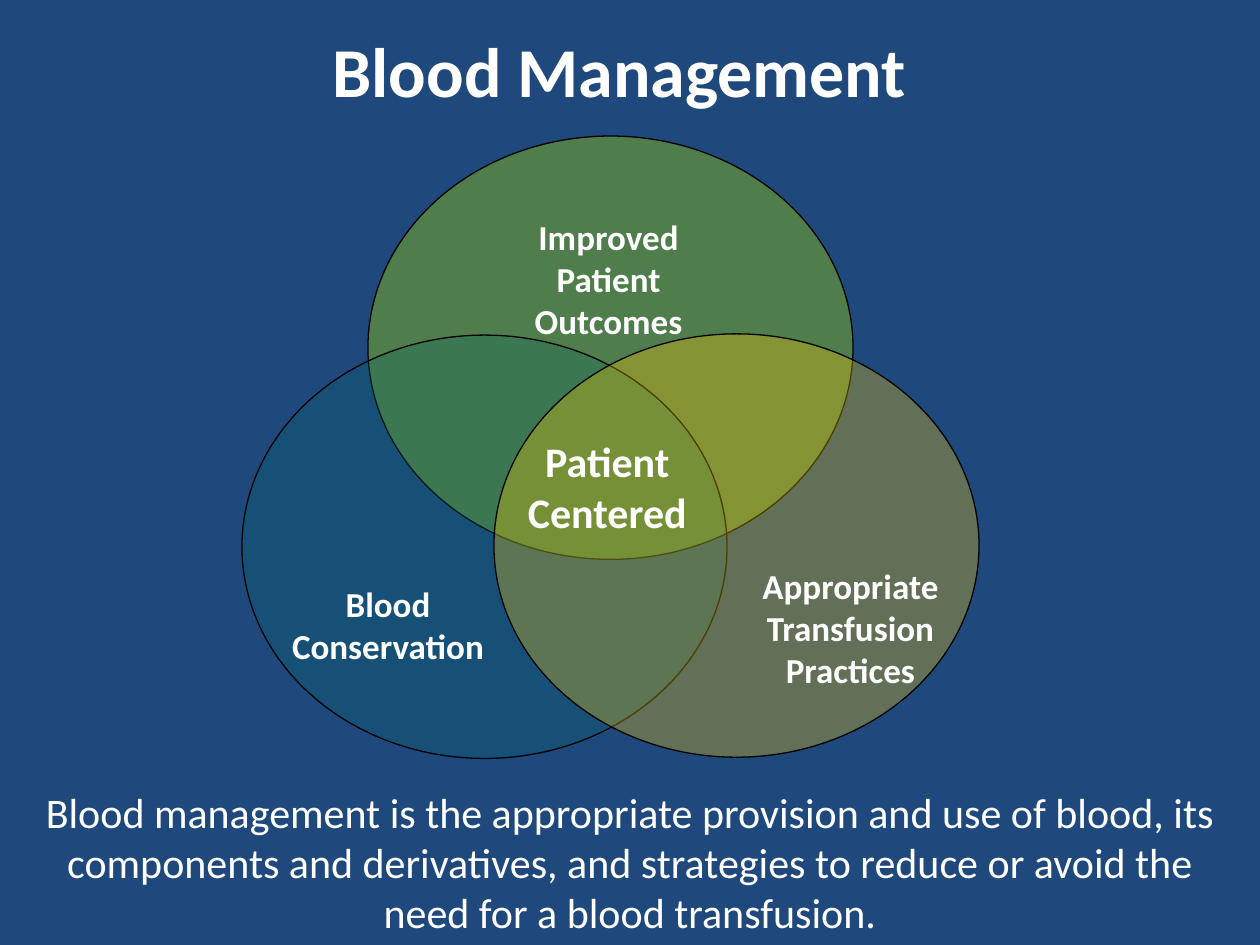
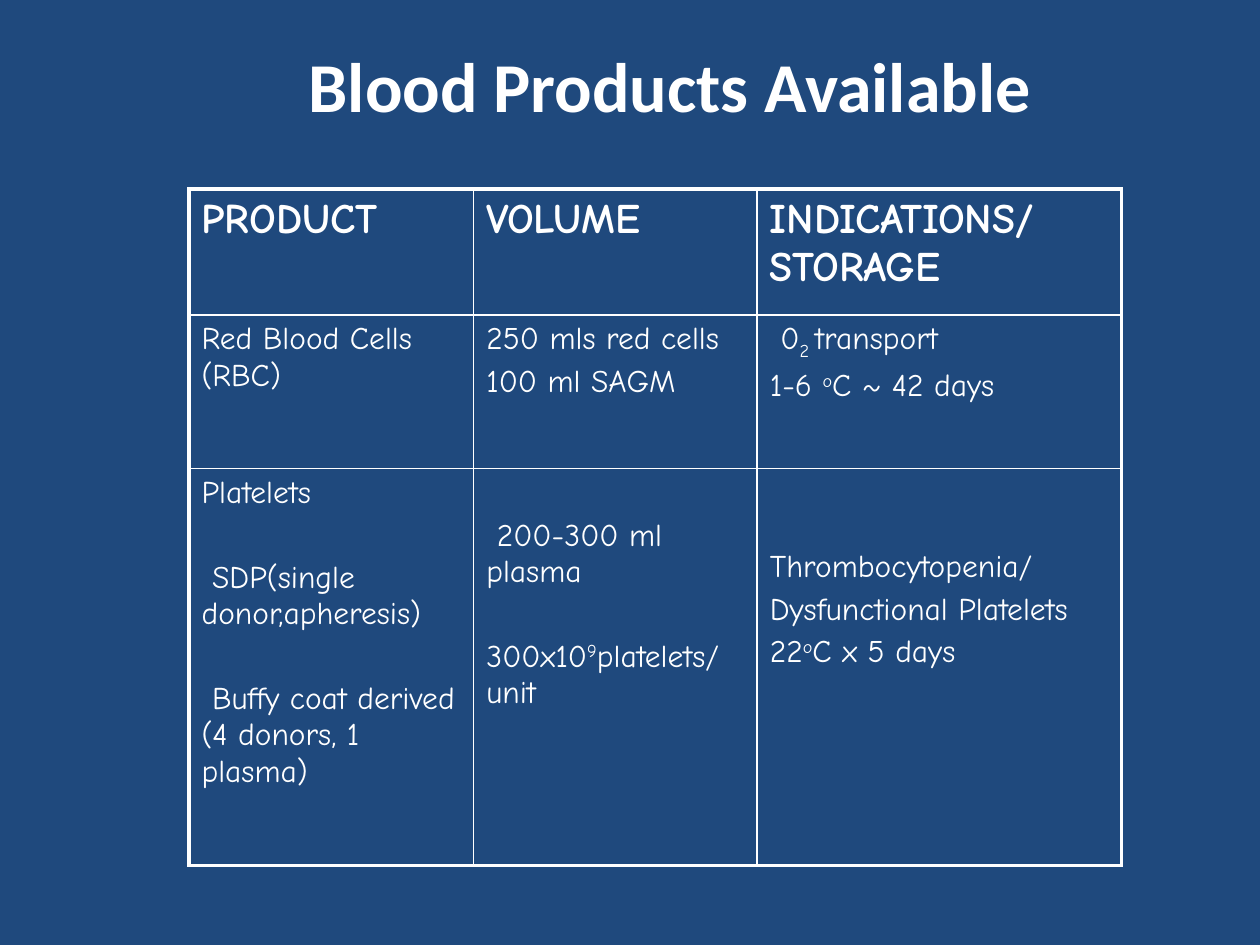
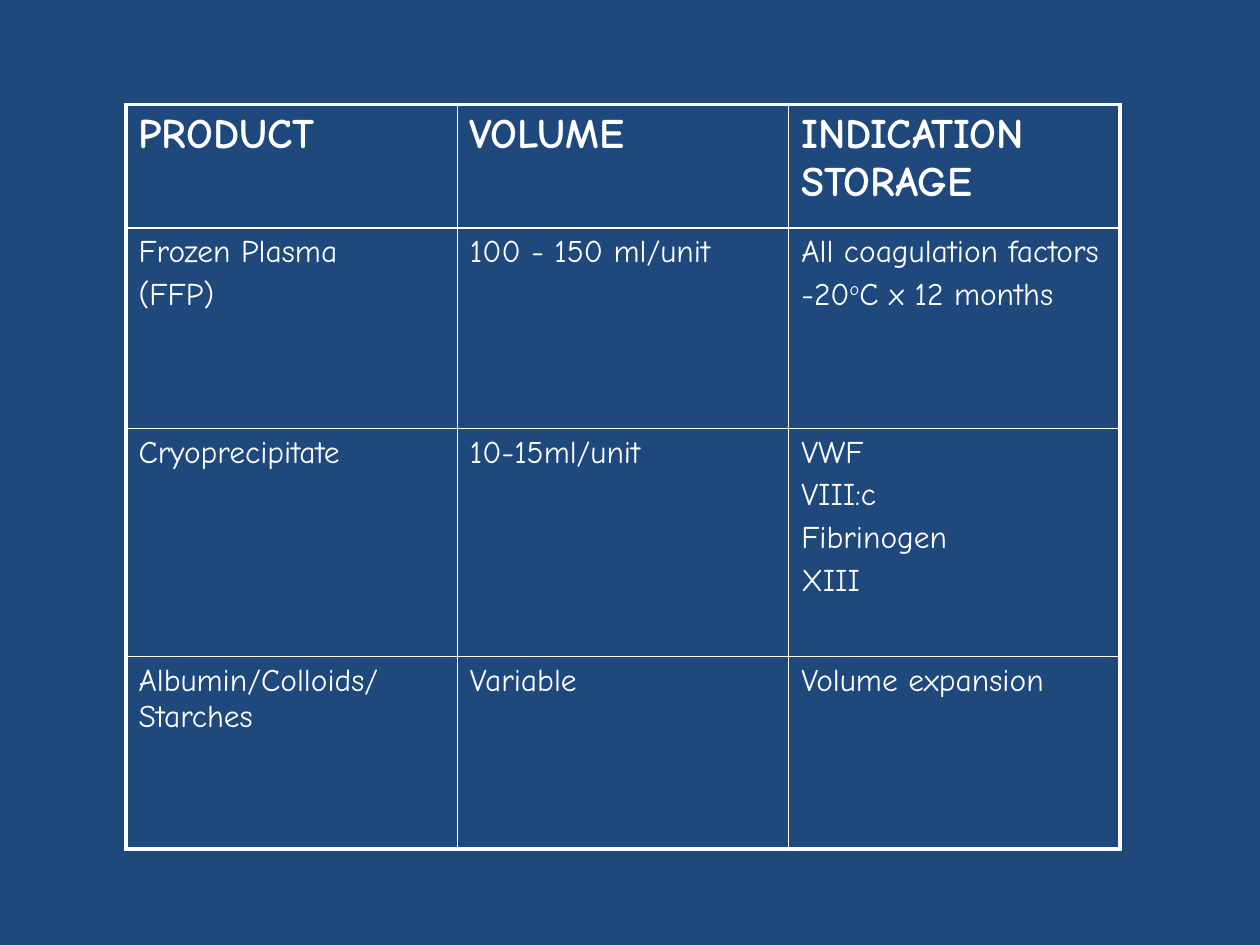
"""Build three slides on blood management and the blood products available."""
from dataclasses import dataclass
from typing import NamedTuple

from lxml.etree import SubElement
from pptx import Presentation
from pptx.dml.color import RGBColor
from pptx.enum.shapes import MSO_SHAPE
from pptx.enum.text import PP_ALIGN
from pptx.oxml.ns import qn
from pptx.util import Inches, Pt


@dataclass(frozen=True)
class Theme:
    """Colours, fonts, type sizes and line widths shared by the slides."""
    background: RGBColor = RGBColor(0x1F, 0x49, 0x7D)
    text: RGBColor = RGBColor(0xFF, 0xFF, 0xFF)
    outline: RGBColor = RGBColor(0, 0, 0)
    outcomes: RGBColor = RGBColor(0x99, 0xCC, 0x00)
    conservation: RGBColor = RGBColor(0x00, 0x66, 0x66)
    practices: RGBColor = RGBColor(0xFF, 0xCC, 0x00)
    font: str = "Calibri"
    table_font: str = "Comic Neue"
    title_size: int = 40
    large_size: int = 24
    label_size: int = 20
    body_size: int = 18
    outline_width: float = 0.75
    grid_width: float = 1
    frame_width: float = 2.25


THEME = Theme()
BODY_GAP = 3.6
BLANK_LINE_GAP = 27.7


class Circle(NamedTuple):
    """One circle of the Venn diagram, with its opacity in percent."""
    left: float
    top: float
    color: RGBColor
    opacity: int


class TextBlock(NamedTuple):
    """Centred text at a place on the slide, one paragraph per line."""
    lines: tuple[str, ...]
    left: float
    top: float
    width: float
    height: float
    size: int
    bold: bool = True


class Piece(NamedTuple):
    """Text with a baseline shift in percent."""
    text: str
    baseline: int = 0


class Line(NamedTuple):
    """A table paragraph and the space before it in points."""
    pieces: tuple[Piece, ...]
    gap: float = BODY_GAP


class CellText(NamedTuple):
    """Paragraphs of one cell and the margin above them in inches."""
    lines: tuple[Line, ...]
    margin_top: float = 0.05


class ProductTable(NamedTuple):
    """A product table with its place, grid and content."""
    left: float
    top: float
    columns: tuple[float, ...]
    rows: tuple[float, ...]
    headings: tuple[CellText, ...]
    body: tuple[tuple[CellText, ...], ...]


def line(*pieces: str | Piece, gap: float = BODY_GAP) -> Line:
    """Return a table paragraph made from strings and shifted pieces."""
    return Line(tuple(Piece(piece) if isinstance(piece, str) else piece for piece in pieces), gap)


def lines(*texts: str, gap: float = BODY_GAP) -> CellText:
    """Return a cell with one plain paragraph per text."""
    return CellText(tuple(line(text, gap=gap) for text in texts))


DEGREE = Piece("o", 30)

CIRCLE_SIZE = (3.85, 3.36)
CIRCLES = (
    Circle(2.92, 1.08, THEME.outcomes, 40),
    Circle(1.92, 2.66, THEME.conservation, 25),
    Circle(3.92, 2.65, THEME.practices, 30),
)
VENN_TEXTS = (
    TextBlock(("Improved", "Patient", "Outcomes"), 3.83, 1.66, 2, 0.87, THEME.label_size),
    TextBlock(("Patient", "Centered"), 3.82, 3.41, 2, 0.87, THEME.large_size),
    TextBlock(("Blood", "Conservation"), 2.08, 4.57, 2, 0.73, THEME.label_size),
    TextBlock(("Appropriate", "Transfusion", "Practices"), 5.75, 4.43, 2, 0.87, THEME.label_size),
)
DEFINITION = TextBlock(
    ("Blood management is the appropriate provision and use of blood, its components and "
     "derivatives, and strategies to reduce or avoid the need for a blood transfusion.",),
    0.25, 6.19, 9.5, 1.31, THEME.large_size, False)
MANAGEMENT_TITLE = TextBlock(("Blood Management",), 2.5, 0.17, 4.83, 0.44, THEME.title_size)
PRODUCTS_TITLE = TextBlock(("Blood Products Available",), 1.77, 0.29, 7.09, 0.77, THEME.title_size)

CELL_PRODUCTS = ProductTable(
    1.5, 1.5, (2.26, 2.25, 2.89), (1, 1.22, 3.15),
    (lines("PRODUCT"), lines("VOLUME"), lines("INDICATIONS/", "STORAGE", gap=0)),
    (
        (
            lines("Red Blood Cells (RBC)"),
            lines("250 mls red cells", "100 ml SAGM"),
            CellText((line(" 0", Piece("2 ", -25), "transport"),
                      line("1-6 ", DEGREE, "C ~ 42 days"))),
        ),
        (
            lines("Platelets", " SDP(single donor,apheresis)",
                  " Buffy coat derived (4 donors, 1 plasma)", gap=BLANK_LINE_GAP),
            CellText((line(" 200-300 ml plasma"),
                      line("300x10", Piece("9", 30), "platelets/unit", gap=BLANK_LINE_GAP)), 0.39),
            CellText((line("Thrombocytopenia/"), line("Dysfunctional Platelets"),
                      line("22", DEGREE, "C x 5 days")), 0.64),
        ),
    ))
PLASMA_PRODUCTS = ProductTable(
    1, 0.83, (2.63,) * 3, (0.98, 1.59, 1.81, 1.53),
    (lines("PRODUCT"), lines("VOLUME"), lines("INDICATION", "STORAGE", gap=0)),
    (
        (
            lines("Frozen Plasma", "(FFP)"),
            lines("100 - 150 ml/unit"),
            CellText((line("All coagulation factors"), line("-20", DEGREE, "C x 12 months"))),
        ),
        (
            lines("Cryoprecipitate"),
            lines("10-15ml/unit"),
            lines("VWF", "VIII:c", "Fibrinogen", "XIII"),
        ),
        (
            lines("Albumin/Colloids/", "Starches", gap=0),
            lines("Variable"),
            lines("Volume expansion"),
        ),
    ))


def add_run(paragraph, text: str, font_name: str, size: int, bold: bool, baseline: int = 0) -> None:
    """Add formatted white text to a paragraph."""
    run = paragraph.add_run()
    run.text = text
    for name, value in {"name": font_name, "size": Pt(size), "bold": bold}.items():
        setattr(run.font, name, value)
    run.font.color.rgb = THEME.text
    if baseline:
        run._r.get_or_add_rPr().set("baseline", str(baseline * 1000))


def add_paragraph(frame, index: int):
    """Return the first paragraph of a frame, or a new one after it."""
    return frame.add_paragraph() if index else frame.paragraphs[0]


def add_text(slide, block: TextBlock) -> None:
    """Draw a centred text box."""
    frame = slide.shapes.add_textbox(
        *map(Inches, (block.left, block.top, block.width, block.height))).text_frame
    frame.word_wrap = True
    for index, text in enumerate(block.lines):
        paragraph = add_paragraph(frame, index)
        paragraph.alignment = PP_ALIGN.CENTER
        add_run(paragraph, text, THEME.font, block.size, block.bold)


def add_circle(slide, circle: Circle) -> None:
    """Draw a translucent circle of the Venn diagram."""
    shape = slide.shapes.add_shape(
        MSO_SHAPE.OVAL, *map(Inches, (circle.left, circle.top, *CIRCLE_SIZE)))
    shape.shadow.inherit = False
    shape.fill.solid()
    shape.fill.fore_color.rgb = circle.color
    color = shape._element.spPr.find(qn("a:solidFill"))[0]
    SubElement(color, qn("a:alpha"), val=str(circle.opacity * 1000))
    shape.line.color.rgb = THEME.outline
    shape.line.width = Pt(THEME.outline_width)


def set_borders(cell, outer: dict[str, bool]) -> None:
    """Draw the cell's edges, heavier where they are on the table's frame."""
    properties = cell._tc.get_or_add_tcPr()
    for side, is_outer in outer.items():
        width = THEME.frame_width if is_outer else THEME.grid_width
        border = SubElement(properties, qn(f"a:ln{side}"), w=str(Pt(width)))
        fill = SubElement(border, qn("a:solidFill"))
        SubElement(fill, qn("a:srgbClr"), val=str(THEME.text))


def fill_cell(cell, content: CellText, size: int, bold: bool) -> None:
    """Write the paragraphs of a cell."""
    cell.margin_top = Inches(content.margin_top)
    for index, item in enumerate(content.lines):
        paragraph = add_paragraph(cell.text_frame, index)
        paragraph.space_before = Pt(item.gap if index else 0)
        for piece in item.pieces:
            add_run(paragraph, piece.text, THEME.table_font, size, bold, piece.baseline)


def add_product_table(slide, product: ProductTable) -> None:
    """Draw a product table with a heavy frame and a light grid."""
    last_row, last_column = len(product.rows) - 1, len(product.columns) - 1
    table = slide.shapes.add_table(
        len(product.rows), len(product.columns),
        *map(Inches, (product.left, product.top, sum(product.columns), sum(product.rows)))).table
    table.first_row = table.horz_banding = False
    for column, width in zip(table.columns, product.columns):
        column.width = Inches(width)
    for row, height in zip(table.rows, product.rows):
        row.height = Inches(height)
    for row_index, contents in enumerate((product.headings, *product.body)):
        is_heading = row_index == 0
        size = THEME.large_size if is_heading else THEME.body_size
        for column_index, content in enumerate(contents):
            cell = table.cell(row_index, column_index)
            fill_cell(cell, content, size, is_heading)
            set_borders(cell, {"L": column_index == 0, "R": column_index == last_column,
                               "T": is_heading, "B": row_index == last_row})
            cell.fill.background()


def add_slide(presentation):
    """Add a blank slide with the shared background."""
    slide = presentation.slides.add_slide(presentation.slide_layouts[6])
    slide.background.fill.solid()
    slide.background.fill.fore_color.rgb = THEME.background
    return slide


def main() -> None:
    """Build and save the presentation."""
    presentation = Presentation()
    presentation.slide_width, presentation.slide_height = Inches(10), Inches(7.5)

    slide = add_slide(presentation)
    add_text(slide, DEFINITION)
    for circle in CIRCLES:
        add_circle(slide, circle)
    for block in (*VENN_TEXTS, MANAGEMENT_TITLE):
        add_text(slide, block)

    slide = add_slide(presentation)
    add_product_table(slide, CELL_PRODUCTS)
    add_text(slide, PRODUCTS_TITLE)

    add_product_table(add_slide(presentation), PLASMA_PRODUCTS)
    presentation.save("out.pptx")


if __name__ == "__main__":
    main()
